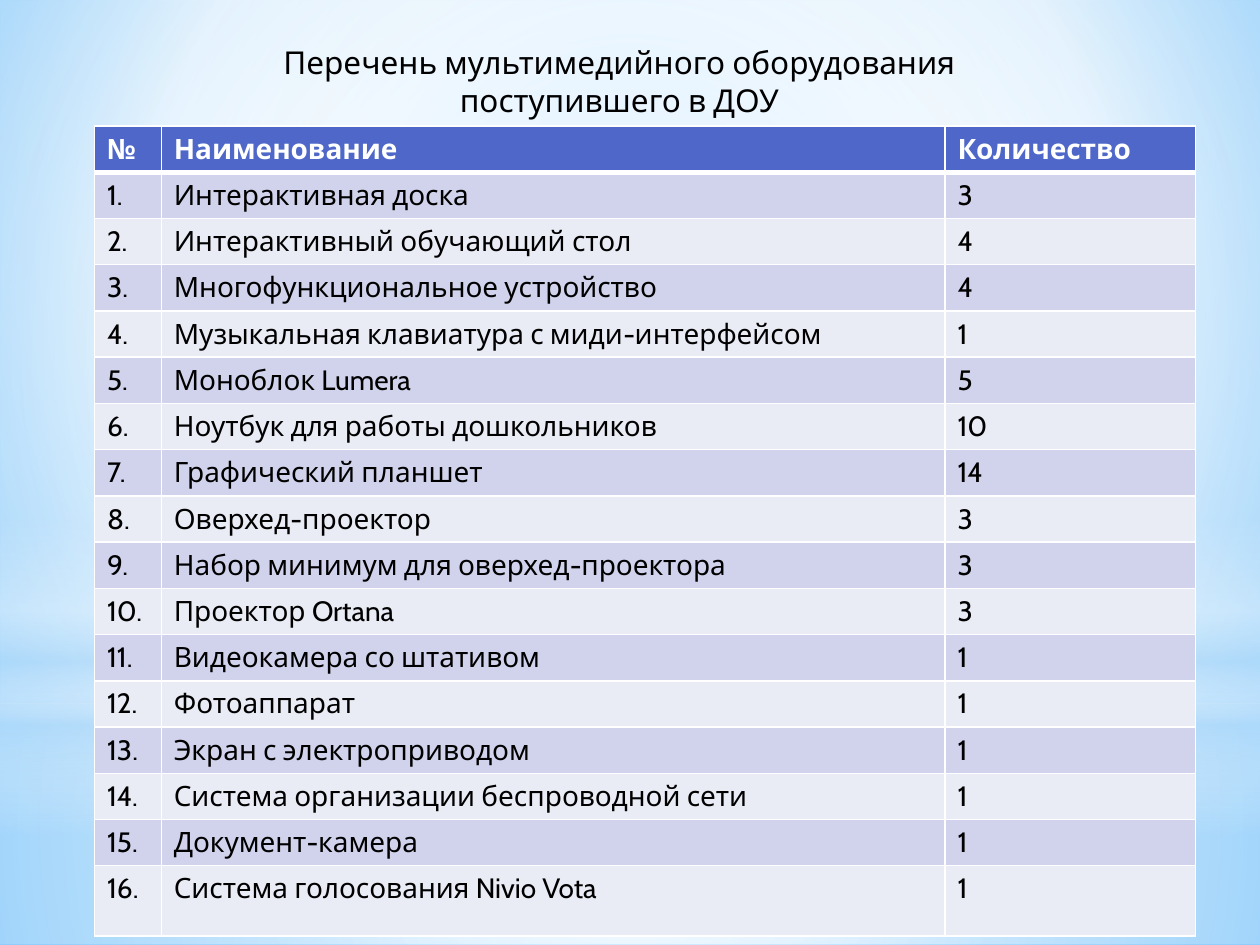
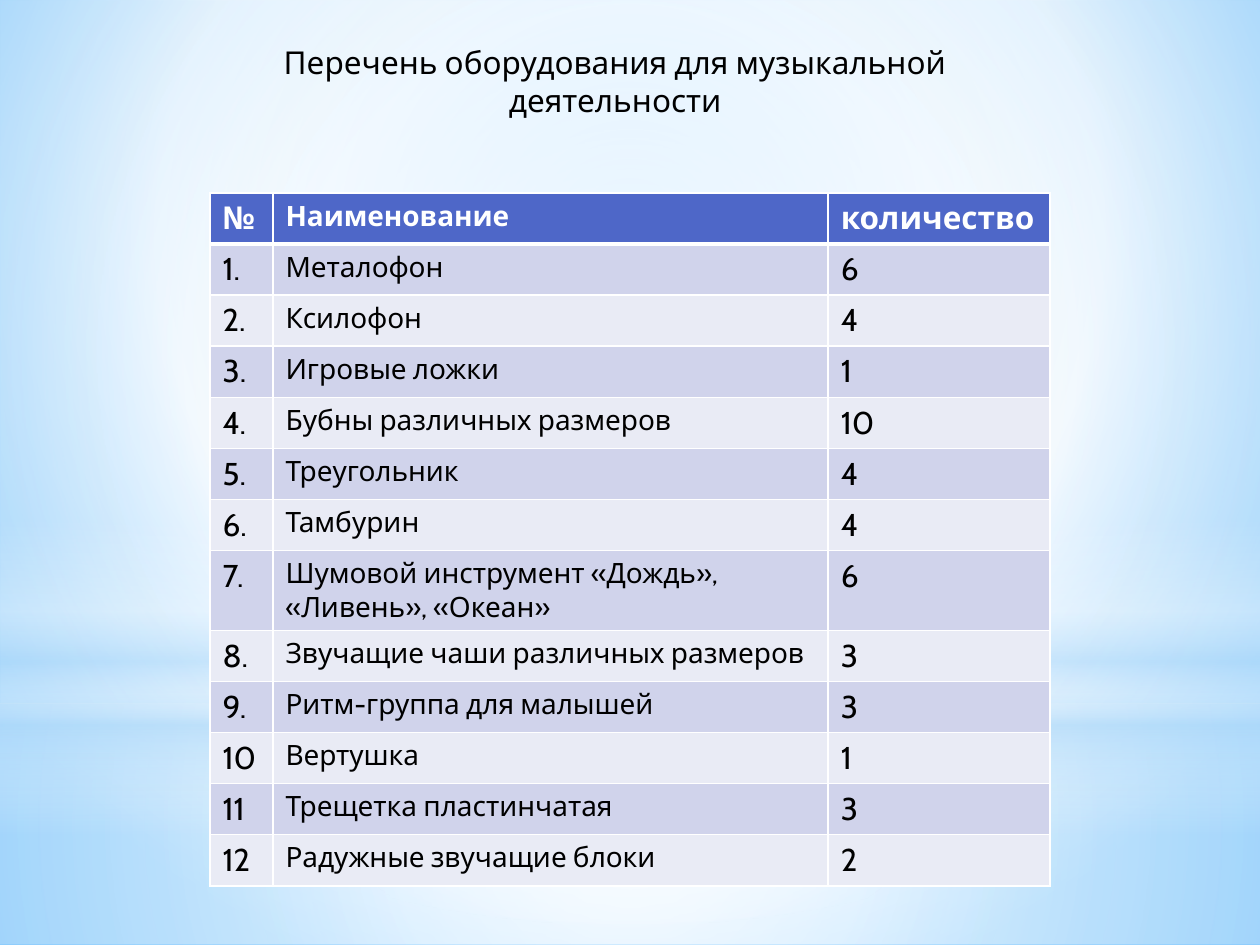
from lxml import etree
from pptx import Presentation
from pptx.dml.color import RGBColor
from pptx.enum.shapes import MSO_SHAPE
from pptx.enum.text import MSO_ANCHOR, MSO_AUTO_SIZE, PP_ALIGN
from pptx.oxml.ns import qn
from pptx.util import Pt

RECT, OVAL = MSO_SHAPE.RECTANGLE, MSO_SHAPE.OVAL
TOP, CENTER = MSO_ANCHOR.TOP, PP_ALIGN.CENTER
GROW = MSO_AUTO_SIZE.SHAPE_TO_FIT_TEXT

FONT = "Cabin"
BLACK, WHITE, SKY = "000000", "FFFFFF", "B4DCFA"
HEAD, ODD, EVEN = "4E67C8", "D0D3EB", "E9EBF5"
MID = (50, 50, 50, 50)


def style(run, size, color, bold=False):
    font = run.font
    font.name, font.size, font.bold = FONT, Pt(size), bold
    font.color.rgb = RGBColor.from_string(color)


def blend(item, stops, focus):
    """Replace the solid fill of item by a gradient: round focus, or downward if None."""
    old = item.element.find(".//" + qn("a:solidFill"))
    grad = etree.Element(qn("a:gradFill"), rotWithShape="1")
    marks = etree.SubElement(grad, qn("a:gsLst"))
    for pos, color, alpha in stops:
        mark = etree.SubElement(marks, qn("a:gs"), pos=str(pos * 1000))
        tone = etree.SubElement(mark, qn("a:srgbClr"), val=color)
        if alpha < 100:
            etree.SubElement(tone, qn("a:alpha"), val=str(alpha * 1000))
    if focus:
        path = etree.SubElement(grad, qn("a:path"), path="circle")
        sides = {side: str(part * 1000) for side, part in zip("ltrb", focus)}
        etree.SubElement(path, qn("a:fillToRect"), sides)
    else:
        etree.SubElement(grad, qn("a:lin"), ang="5400000", scaled="0")
    old.getparent().replace(old, grad)


# Each band: shape, top, height, stops (position, colour, opacity), focus
bands = [
    (RECT, 402, 138, [(0, WHITE, 91), (37, WHITE, 76), (100, SKY, 79)], MID),
    (RECT, 0, 402, [(0, WHITE, 89), (48, WHITE, 62), (100, SKY, 79)], MID),
    (RECT, 297, 180, [(0, WHITE, 0), (29, WHITE, 30), (45, SKY, 40),
                      (55, WHITE, 26), (65, SKY, 60), (100, WHITE, 0)], None),
    (OVAL, 126, 402, [(0, WHITE, 100), (56, WHITE, 0)], MID),
]

media = [
    ("№", "Наименование", "Количество"),
    ("1.", "Интерактивная доска", "3"),
    ("2.", "Интерактивный обучающий стол", "4"),
    ("3.", "Многофункциональное устройство", "4"),
    ("4.", "Музыкальная клавиатура с миди-интерфейсом", "1"),
    ("5.", "Моноблок Lumera", "5"),
    ("6.", "Ноутбук для работы дошкольников", "10"),
    ("7.", "Графический планшет", "14"),
    ("8.", "Оверхед-проектор", "3"),
    ("9.", "Набор минимум для оверхед-проектора", "3"),
    ("10.", "Проектор Ortana", "3"),
    ("11.", "Видеокамера со штативом", "1"),
    ("12.", "Фотоаппарат", "1"),
    ("13.", "Экран с электроприводом", "1"),
    ("14.", "Система организации беспроводной сети", "1"),
    ("15.", "Документ-камера", "1"),
    ("16.", "Система голосования Nivio Vota", "1"),
]
music = [
    ("№", "Наименование", "количество"),
    ("1.", "Металофон", "6"),
    ("2.", "Ксилофон", "4"),
    ("3.", "Игровые ложки", "1"),
    ("4.", "Бубны различных размеров", "10"),
    ("5.", "Треугольник", "4"),
    ("6.", "Тамбурин", "4"),
    ("7.", "Шумовой инструмент «Дождь», «Ливень», «Океан»", "6"),
    ("8.", "Звучащие чаши различных размеров", "3"),
    ("9.", "Ритм-группа для малышей", "3"),
    ("10", "Вертушка", "1"),
    ("11", "Трещетка пластинчатая", "3"),
    ("12", "Радужные звучащие блоки", "2"),
]

# Each page: title, its left and width, rows, table left and top,
# column widths, text sizes by column, row height, last row height
pages = [
    ("Перечень мультимедийного оборудования поступившего в ДОУ", 116, 476,
     media, 54, 72, (38.16, 447.84, 143.28), (16, 16, 16), 24, 40.3),
    ("Перечень оборудования для музыкальной деятельности", 127.5, 448,
     music, 120, 110.2, (36, 317.28, 126.72), (18, 16, 18), 29.2, 29.2),
]

deck = Presentation()
deck.slide_width, deck.slide_height = Pt(720), Pt(540)
layout = deck.slide_layouts[5]

layout.background.fill.solid()
blend(layout, [(0, "9ED5FF", 100), (60, WHITE, 100), (100, "5BB9FF", 100)],
      (20, 10, 20, 60))

for page, (title, left, width, rows, x, y, cols, sizes, high, last) in enumerate(pages):
    slide = deck.slides.add_slide(layout)

    # The bands are drawn once, then handed to the shared layout
    if page == 0:
        for i, (kind, top, height, stops, focus) in enumerate(bands):
            band = slide.shapes.add_shape(kind, Pt(0), Pt(top), Pt(720), Pt(height))
            band.shadow.inherit = False
            band.line.fill.background()
            band.fill.solid()
            blend(band, stops, focus)
            band.element.nvSpPr.cNvPr.set("id", str(20 + i))
            layout.shapes.element.insert(2 + i, band.element)

    head = slide.shapes.title
    head.left, head.top, head.width, head.height = Pt(left), Pt(21), Pt(width), Pt(51)
    frame = head.text_frame
    frame.word_wrap, frame.auto_size = True, GROW
    frame.vertical_anchor = TOP
    para = frame.paragraphs[0]
    para.alignment = CENTER
    run = para.add_run()
    run.text = title
    style(run, 18, BLACK)

    table = slide.shapes.add_table(len(rows), 3, Pt(x), Pt(y), Pt(sum(cols)),
                                   Pt(high * (len(rows) - 1) + last)).table
    for col, width in zip(table.columns, cols):
        col.width = Pt(width)
    for r, row in enumerate(rows):
        table.rows[r].height = Pt(last if r == len(rows) - 1 else high)
        shade = HEAD if r == 0 else ODD if r % 2 else EVEN
        for c, text in enumerate(row):
            cell = table.cell(r, c)
            cell.fill.solid()
            cell.fill.fore_color.rgb = RGBColor.from_string(shade)
            run = cell.text_frame.paragraphs[0].add_run()
            run.text = text
            style(run, sizes[c], BLACK if r else WHITE, r == 0)
            props = cell._tc.get_or_add_tcPr()
            for i, side in enumerate("LRTB"):
                thick = (r, side) in ((0, "B"), (1, "T"))
                line = etree.Element(qn("a:ln" + side), w=str(Pt(3 if thick else 1)))
                fill = etree.SubElement(line, qn("a:solidFill"))
                etree.SubElement(fill, qn("a:srgbClr"), val=WHITE)
                props.insert(i, line)

deck.save("out.pptx")
